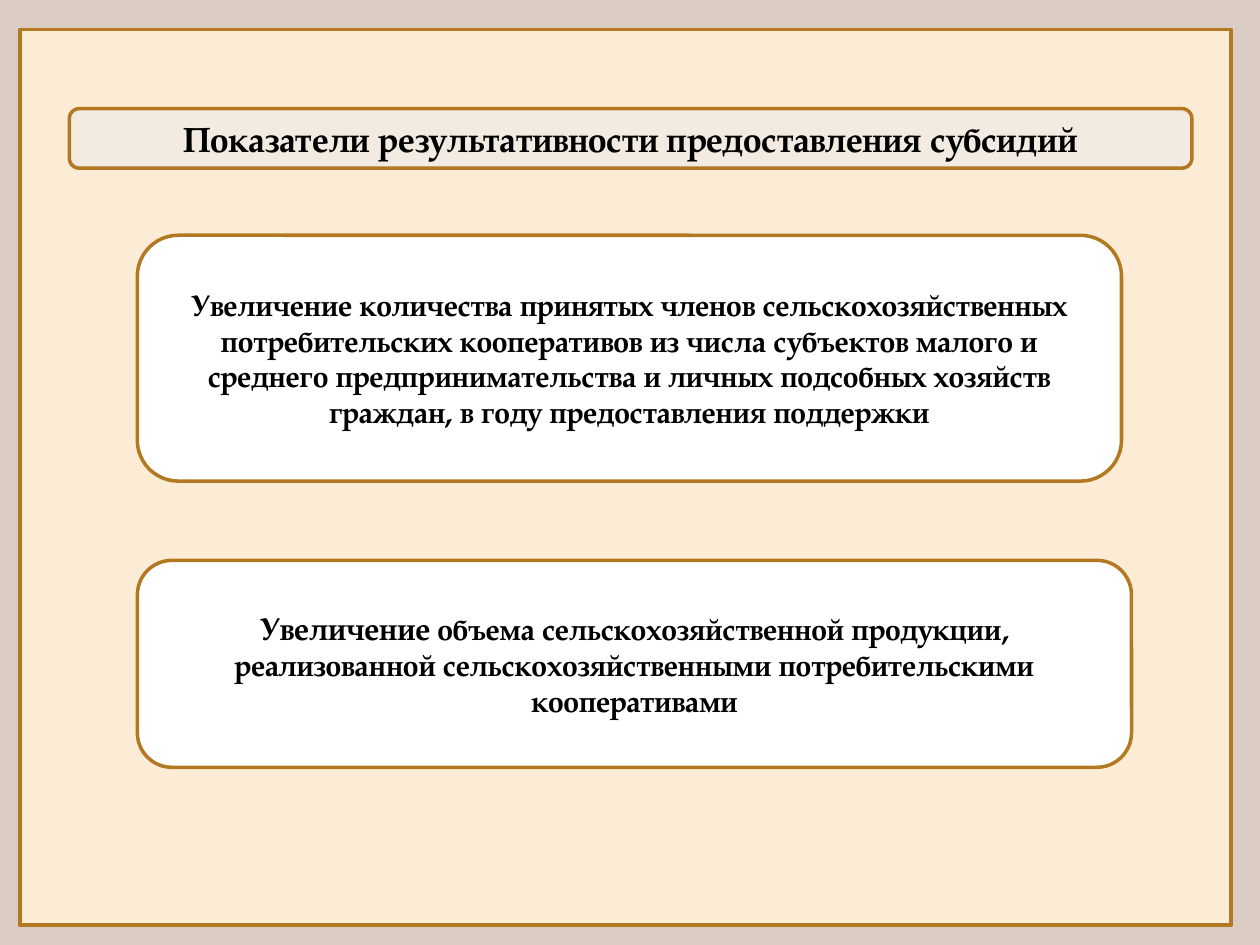
from pptx import Presentation
from pptx.dml.color import RGBColor
from pptx.enum.shapes import MSO_SHAPE
from pptx.enum.text import MSO_ANCHOR, PP_ALIGN
from pptx.util import Inches, Pt

WIDE, HIGH = 10, 7.5
GOLD, CREAM, SAND, WHITE = "B27822", "FCECD5", "F3EAE2", "FFFFFF"
FONT = {"name": "TeX Gyre Pagella", "bold": True}

TITLE = "Показатели результативности предоставления субсидий"
MEMBERS = (
    "Увеличение количества принятых членов сельскохозяйственных "
    "потребительских кооперативов из числа субъектов малого и среднего "
    "предпринимательства и личных подсобных хозяйств граждан, "
    "в году предоставления поддержки"
)
SALES = (
    " объема сельскохозяйственной продукции, реализованной "
    "сельскохозяйственными потребительскими кооперативами"
)


def paint(color, code):
    color.rgb = RGBColor.from_string(code)


def panel(slide, kind, box, fill):
    """Draw a gold-edged shape in a box given as shares of the slide."""
    left, top, width, height = box
    shape = slide.shapes.add_shape(
        kind, Inches(left * WIDE), Inches(top * HIGH),
        Inches(width * WIDE), Inches(height * HIGH))
    shape.shadow.inherit = False
    shape.fill.solid()
    paint(shape.fill.fore_color, fill)
    paint(shape.line.color, GOLD)
    shape.line.width = Pt(2)
    return shape


def card(slide, box, fill, runs):
    """Draw a rounded panel with centred text; runs are (text, size)."""
    shape = panel(slide, MSO_SHAPE.ROUNDED_RECTANGLE, box, fill)
    frame = shape.text_frame
    for key, value in {"word_wrap": True,
                       "vertical_anchor": MSO_ANCHOR.MIDDLE}.items():
        setattr(frame, key, value)
    para = frame.paragraphs[0]
    para.alignment = PP_ALIGN.CENTER
    for text, size in runs:
        run = para.add_run()
        run.text = text
        for key, value in {**FONT, "size": Pt(size)}.items():
            setattr(run.font, key, value)
        paint(run.font.color, "000000")


def goals(slide, box):
    """Stack the two goal cards, the lower one slightly wider."""
    left, top, width, height = box
    card(slide, (left, top, width * 0.99, height * 0.462), WHITE,
         [(MEMBERS, 17)])
    card(slide, (left, top + height * 0.611, width, height * 0.389), WHITE,
         [("Увеличение", 18), (SALES, 17)])


def main():
    deck = Presentation()
    deck.slide_width, deck.slide_height = Inches(WIDE), Inches(HIGH)
    slide = deck.slides.add_slide(deck.slide_layouts[6])

    # Backdrop and frame
    back = slide.background.fill
    back.solid()
    paint(back.fore_color, "DACBC3")
    panel(slide, MSO_SHAPE.RECTANGLE, (0.016, 0.031, 0.961, 0.948), CREAM)

    # Heading and goals
    card(slide, (0.055, 0.115, 0.891, 0.063), SAND, [(TITLE, 20)])
    goals(slide, (0.109, 0.249, 0.789, 0.563))

    deck.save("out.pptx")


if __name__ == "__main__":
    main()
